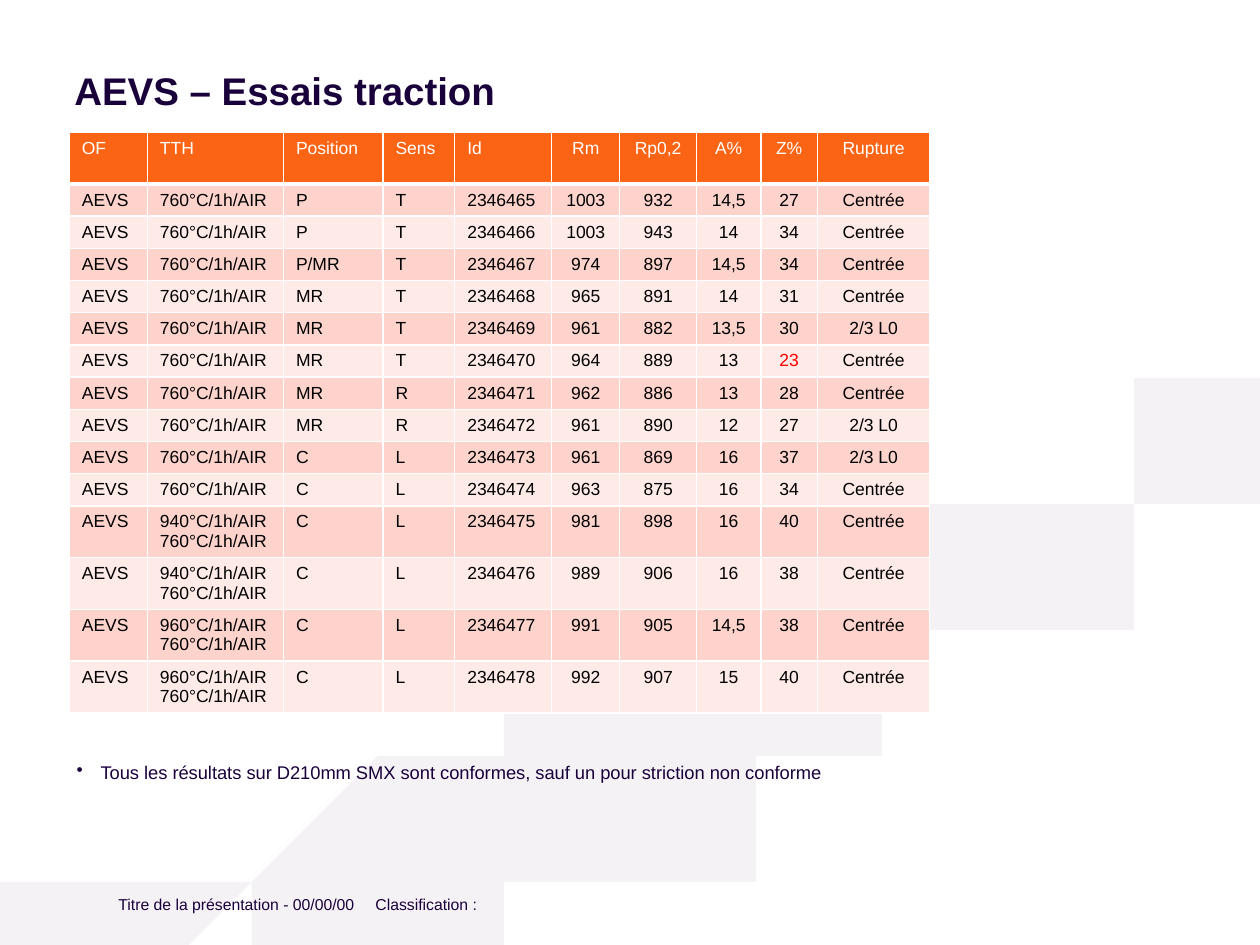
"""Build the tensile test results slide."""
from lxml import etree
from pptx import Presentation
from pptx.dml.color import RGBColor
from pptx.enum import text
from pptx.oxml import ns
from pptx.util import Inches, Pt

COLORS = {"ink": "1A003B", "wave": "F4F2F5", "header": "FA6414", "dark_band": "FDD3CC",
          "light_band": "FEEAE7", "white": "FFFFFF", "black": "000000", "alert": "FF0000"}
TITLE = "AEVS – Essais traction"
FOOTER = "Titre de la présentation - 00/00/00\tClassification :"
CONCLUSION = "Tous les résultats sur D210mm SMX sont conformes, sauf un pour striction non conforme"
HEADERS = ["OF", "TTH", "Position", "Sens", "Id", "Rm", "Rp0,2", "A%", "Z%", "Rupture"]
COLUMN_WIDTHS = [0.62, 1.08, 0.79, 0.57, 0.77, 0.54, 0.61, 0.51, 0.45, 0.89]
FIRST_CENTERED_COLUMN = 5
HEADER_HEIGHT, ROW_HEIGHT = 0.41, 0.24
ORDER, FIRST_ID = "AEVS", 2346465
AGED = "760°C/1h/AIR"
AT_940, AT_960 = f"940°C/1h/AIR\n{AGED}", f"960°C/1h/AIR\n{AGED}"
CENTERED, THIRD = "Centrée", "2/3 L0"
RESULTS = [
    (AGED, "P", "T", "1003", "932", "14,5", "27", CENTERED),
    (AGED, "P", "T", "1003", "943", "14", "34", CENTERED),
    (AGED, "P/MR", "T", "974", "897", "14,5", "34", CENTERED),
    (AGED, "MR", "T", "965", "891", "14", "31", CENTERED),
    (AGED, "MR", "T", "961", "882", "13,5", "30", THIRD),
    (AGED, "MR", "T", "964", "889", "13", "23", CENTERED),
    (AGED, "MR", "R", "962", "886", "13", "28", CENTERED),
    (AGED, "MR", "R", "961", "890", "12", "27", THIRD),
    (AGED, "C", "L", "961", "869", "16", "37", THIRD),
    (AGED, "C", "L", "963", "875", "16", "34", CENTERED),
    (AT_940, "C", "L", "981", "898", "16", "40", CENTERED),
    (AT_940, "C", "L", "989", "906", "16", "38", CENTERED),
    (AT_960, "C", "L", "991", "905", "14,5", "38", CENTERED),
    (AT_960, "C", "L", "992", "907", "15", "40", CENTERED),
]
NONCONFORMING = ("Z%", "23")
WAVE_CURVES = [
    [(5.86, 4.7), (5.2, 5.05), (4.63, 5.36), (4.12, 5.63)],
    [(4.12, 5.63), (2.08, 6.75), (1.19, 7.23), (0, 7.2)],
    [(0, 7.5), (0, 7.5), (4.26, 7.5), (4.26, 7.5)],
    [(4.26, 7.5), (5.46, 6.5), (7.47, 5), (10, 4.3)],
    [(10, 3.42), (8.6, 3.55), (7.21, 3.98), (5.86, 4.7)],
]


def color(name):
    return RGBColor.from_string(COLORS[name])


def write(frame, content, size=10, ink="ink", bold=False, align=text.PP_ALIGN.LEFT,
          spacing=None, bullet=None, tab=None):
    frame.text = content
    for paragraph in frame.paragraphs:
        paragraph.alignment = align
        if spacing:
            paragraph.line_spacing = spacing
        properties = paragraph._p.get_or_add_pPr()
        if bullet:
            properties.set("marL", str(Inches(0.19)))
            properties.set("indent", str(-Inches(0.19)))
            etree.SubElement(properties, ns.qn("a:buChar")).set("char", bullet)
        if tab:
            stops = etree.SubElement(properties, ns.qn("a:tabLst"))
            etree.SubElement(stops, ns.qn("a:tab"), pos=str(Inches(tab)), algn="l")
        for run in paragraph.runs:
            run.font.name, run.font.size, run.font.bold = "Arial", Pt(size), bold
            run.font.color.rgb = color(ink)


def place(shape, left, top, width, height):
    shape.left, shape.top = Inches(left), Inches(top)
    shape.width, shape.height = Inches(width), Inches(height)


def anchor_bottom(frame):
    frame.word_wrap, frame.auto_size = True, text.MSO_AUTO_SIZE.NONE
    frame.vertical_anchor = text.MSO_ANCHOR.BOTTOM
    frame.margin_left = frame.margin_top = frame.margin_right = frame.margin_bottom = 0


def curve_points(curve, steps=24):
    for step in range(steps + 1):
        t = step / steps
        weights = ((1 - t) ** 3, 3 * t * (1 - t) ** 2, 3 * t ** 2 * (1 - t), t ** 3)
        yield tuple(sum(w * point[axis] for w, point in zip(weights, curve)) for axis in (0, 1))


def add_wave(slide):
    points = [point for curve in WAVE_CURVES for point in curve_points(curve)]
    builder = slide.shapes.build_freeform(*points[0], scale=Inches(1))
    builder.add_line_segments(points[1:], close=True)
    wave = builder.convert_to_shape()
    wave.shadow.inherit = False
    wave.fill.solid()
    wave.fill.fore_color.rgb = color("wave")
    wave.line.fill.background()
    slide.shapes._spTree.insert(2, wave._element)


def set_borders(cell, bottom):
    properties = cell._tc.get_or_add_tcPr()
    for index, (side, width) in enumerate((("L", 1), ("R", 1), ("T", 1), ("B", bottom))):
        line = etree.Element(ns.qn(f"a:ln{side}"), w=str(Pt(width)))
        fill = etree.SubElement(line, ns.qn("a:solidFill"))
        etree.SubElement(fill, ns.qn("a:srgbClr"), val=COLORS["white"])
        properties.insert(index, line)


def add_results(slide):
    rows = [HEADERS] + [(ORDER, *result[:3], str(FIRST_ID + index), *result[3:])
                        for index, result in enumerate(RESULTS)]
    height = HEADER_HEIGHT + ROW_HEIGHT * len(RESULTS)
    table = slide.shapes.add_table(len(rows), len(HEADERS), Inches(0.55), Inches(1.05),
                                   Inches(sum(COLUMN_WIDTHS)), Inches(height)).table
    for column, width in zip(table.columns, COLUMN_WIDTHS):
        column.width = Inches(width)
    for row_index, values in enumerate(rows):
        is_header = row_index == 0
        table.rows[row_index].height = Inches(HEADER_HEIGHT if is_header else ROW_HEIGHT)
        band = "header" if is_header else ("light_band", "dark_band")[row_index % 2]
        for column_index, value in enumerate(values):
            cell = table.cell(row_index, column_index)
            cell.fill.solid()
            cell.fill.fore_color.rgb = color(band)
            set_borders(cell, bottom=3 if is_header else 1)
            ink = "white" if is_header else "black"
            if (HEADERS[column_index], value) == NONCONFORMING:
                ink = "alert"
            centered = column_index >= FIRST_CENTERED_COLUMN
            write(cell.text_frame, value, ink=ink,
                  align=text.PP_ALIGN.CENTER if centered else text.PP_ALIGN.LEFT)


def main():
    presentation = Presentation()
    presentation.slide_width, presentation.slide_height = Inches(10), Inches(7.5)
    slide = presentation.slides.add_slide(presentation.slide_layouts[5])
    add_wave(slide)

    title = slide.shapes.title
    place(title, 0.59, 0, 8.82, 0.91)
    anchor_bottom(title.text_frame)
    write(title.text_frame, TITLE, size=22, bold=True, spacing=0.95)

    footer = slide.shapes.add_textbox(0, 0, 0, 0)
    place(footer, 0.94, 6.77, 3.74, 0.48)
    anchor_bottom(footer.text_frame)
    write(footer.text_frame, FOOTER, size=9, spacing=0.9, tab=2.04)

    add_results(slide)

    conclusion = slide.shapes.add_textbox(0, 0, 0, 0)
    place(conclusion, 0.51, 5.99, 7.64, 0.28)
    conclusion.text_frame.word_wrap = True
    conclusion.text_frame.auto_size = text.MSO_AUTO_SIZE.SHAPE_TO_FIT_TEXT
    write(conclusion.text_frame, CONCLUSION, size=10.5, bullet="•")

    presentation.save("out.pptx")


if __name__ == "__main__":
    main()
